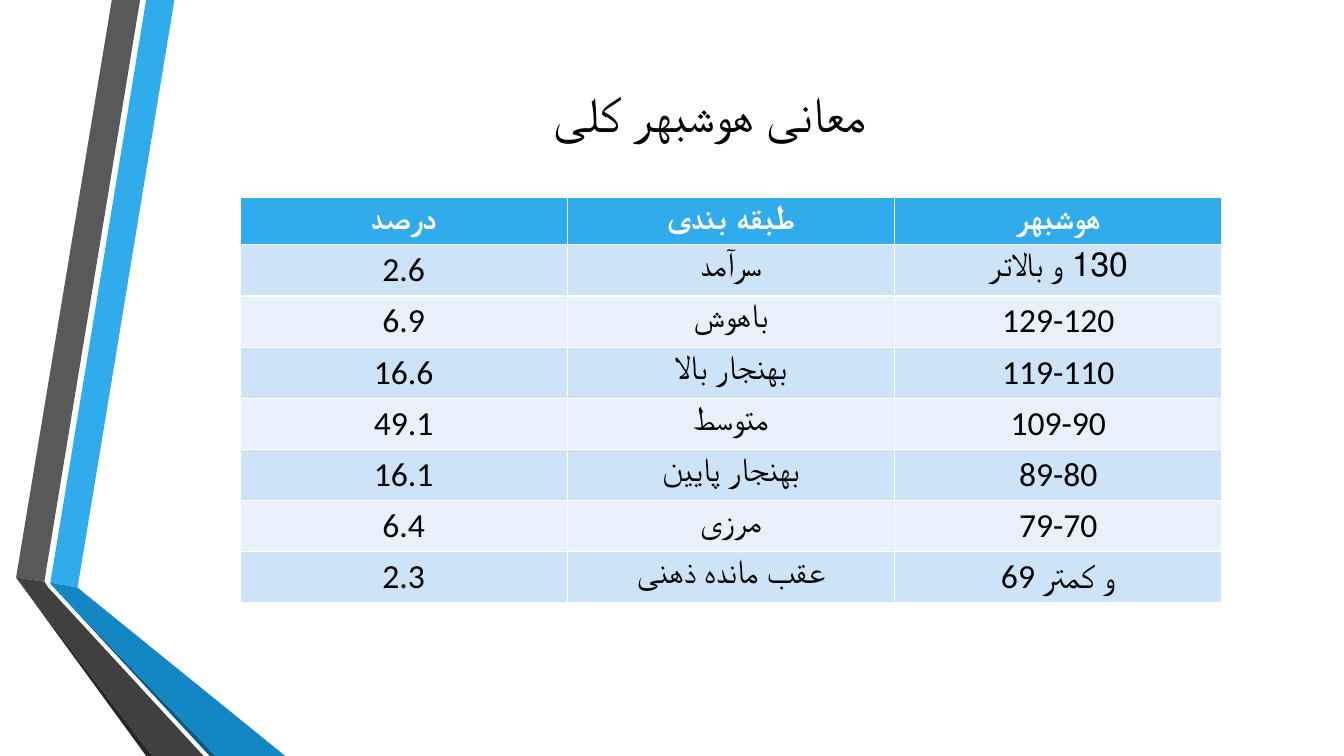
"""Build the slide listing the IQ bands, their classification and share."""
import pptx
import pptx.util
import pptx.dml.color
import pptx.enum.text

Inches = pptx.util.Inches
BLACK, WHITE, BLUE = "000000", "FFFFFF", "30ACEC"
BANDS = ["E8F1FB", "CDE3F8"]


def paint(fill, colour):
    fill.solid()
    fill.fore_color.rgb = pptx.dml.color.RGBColor.from_string(colour)


def write(frame, text, size, colour, bold, rtl):
    frame.text = text
    paragraph = frame.paragraphs[0]
    paragraph.alignment = pptx.enum.text.PP_ALIGN.CENTER
    if rtl:
        paragraph._p.get_or_add_pPr().set("rtl", "1")
    font = paragraph.runs[0].font
    formats = {"name": "Calibri", "size": pptx.util.Pt(size), "bold": bold}
    for attribute, value in formats.items():
        setattr(font, attribute, value)
    paint(font.fill, colour)


deck = pptx.Presentation()
deck.slide_width, deck.slide_height = Inches(13.33), Inches(7.5)
slide = deck.slides.add_slide(deck.slide_layouts[5])

ribbons = [
    (BLUE, [(0.5, 5.78), (0.77, 5.83), (1.73, 0), (1.45, 0)]),
    ("595959", [(1.39, 0), (1.11, 0), (0.16, 5.73), (0.44, 5.77)]),
    ("262626", [(0.16, 5.73), (1.45, 7.5), (1.51, 7.5)]),
    ("0C5A82", [(0.5, 5.79), (2.08, 7.5), (2.14, 7.5)]),
    ("1287C3", [(0.5, 5.79), (2.14, 7.5), (2.83, 7.5), (0.77, 5.83), (0.5, 5.78)]),
    ("404040", [(2.02, 7.5), (0.48, 5.83), (0.44, 5.77), (0.16, 5.73), (1.51, 7.5)]),
]
for colour, corners in ribbons:
    points = [(Inches(x), Inches(y)) for x, y in corners]
    outline = slide.shapes.build_freeform(*points[0])
    outline.add_line_segments(points[1:], close=True)
    ribbon = outline.convert_to_shape()
    ribbon.shadow.inherit = False
    ribbon.line.fill.background()
    paint(ribbon.fill, colour)

title = slide.shapes.title
title_box = {"left": 1.56, "top": 0.77, "width": 10.96, "height": 0.69}
for attribute, value in title_box.items():
    setattr(title, attribute, Inches(value))
title.text_frame.vertical_anchor = pptx.enum.text.MSO_ANCHOR.MIDDLE
write(title.text_frame, "معانی هوشبهر کلی", 36, BLACK, False, True)

iq_rows = [
    ("درصد", "طبقه بندی", "هوشبهر"),
    ("2.6", "سرآمد", "130 و بالاتر"),
    ("6.9", "باهوش", "129-120"),
    ("16.6", "بهنجار بالا", "119-110"),
    ("49.1", "متوسط", "109-90"),
    ("16.1", "بهنجار پایین", "89-80"),
    ("6.4", "مرزی", "79-70"),
    ("2.3", "عقب مانده ذهنی", "69 و کمتر"),
]
iq_table = slide.shapes.add_table(
    len(iq_rows), 3, Inches(2.38), Inches(1.96), Inches(9.74), Inches(0.47 * len(iq_rows))
).table
for r, labels in enumerate(iq_rows):
    header = r == 0
    iq_table.rows[r].height = Inches(0.47)
    for c, label in enumerate(labels):
        cell = iq_table.cell(r, c)
        paint(cell.fill, BLUE if header else BANDS[r % 2])
        rtl = header or label.startswith("130")
        write(cell.text_frame, label, 24, WHITE if header else BLACK, header, rtl)

deck.save("out.pptx")
